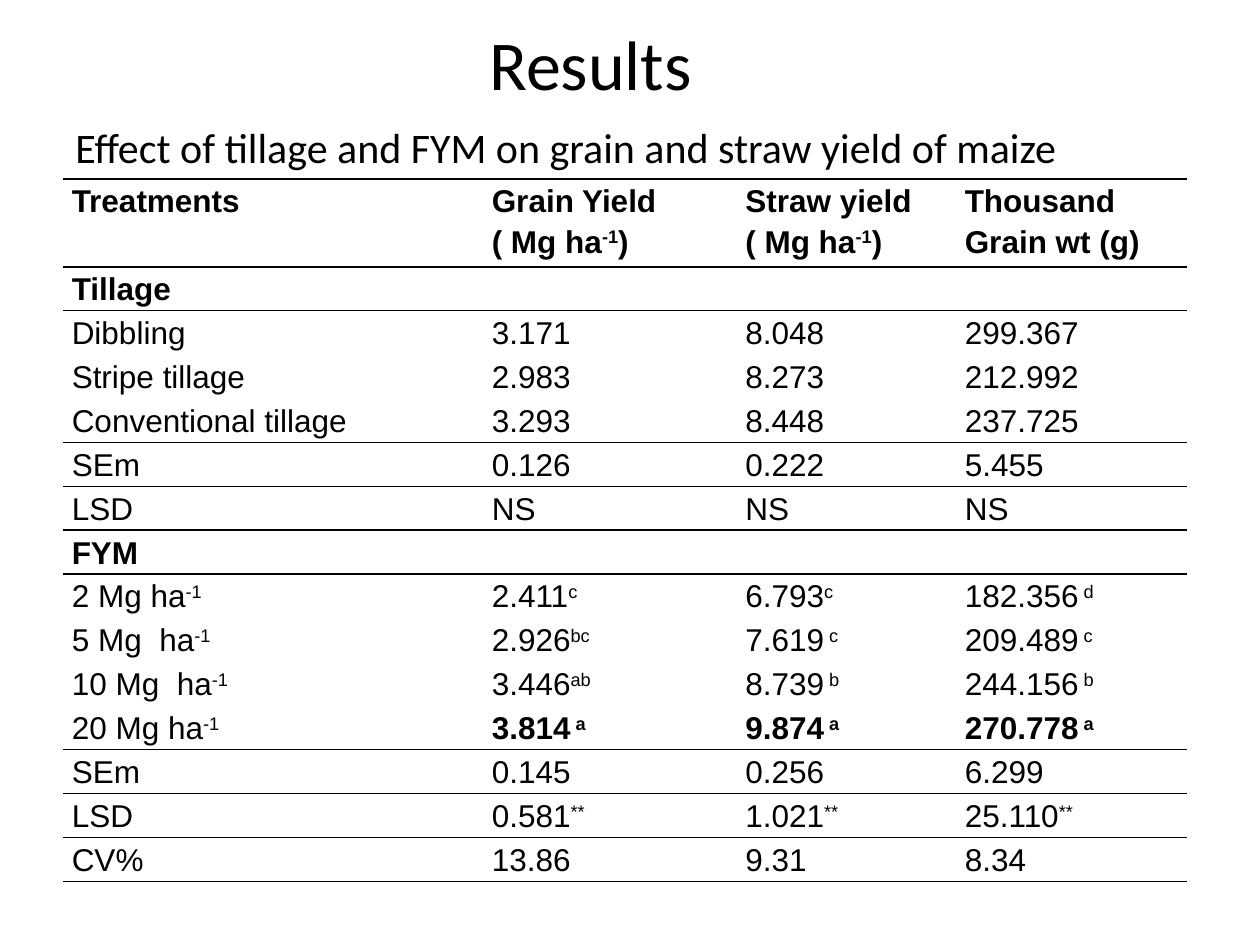
import pptx
import pptx.dml.color
import pptx.enum.text
import pptx.oxml
import pptx.oxml.ns
import pptx.util

Inches = pptx.util.Inches
MIDDLE = pptx.enum.text.MSO_ANCHOR.MIDDLE
CENTER = pptx.enum.text.PP_ALIGN.CENTER
COLORS = {"ink": "000000", "paper": "FFFFFF"}
NO_GRID_STYLE = "{2D5ABB26-0587-4C30-8999-92F81FD0307C}"
COLUMN_WIDTHS = (3.33, 2.01, 1.74, 1.83)
RULED_ROWS = {0, 4, 6, 11, 13, 14}
BOLD_ROWS = {0, 1, 7}
BEST_ROW = 11
YIELDS = [
    ("Treatments", "Grain Yield\n( Mg ha^-1^)", "Straw yield\n( Mg ha^-1^)", "Thousand Grain wt (g)"),
    ("Tillage", "", "", ""),
    ("Dibbling", "3.171", "8.048", "299.367"),
    ("Stripe tillage", "2.983", "8.273", "212.992"),
    ("Conventional tillage", "3.293", "8.448", "237.725"),
    ("SEm", "0.126", "0.222", "5.455"),
    ("LSD", "NS", "NS", "NS"),
    ("FYM", "", "", ""),
    ("2 Mg ha^-1", "2.411^c", "6.793^c", "182.356^ d"),
    ("5 Mg  ha^-1", "2.926^bc", "7.619^ c", "209.489^ c"),
    ("10 Mg  ha^-1", "3.446^ab", "8.739^ b", "244.156^ b"),
    ("20 Mg ha^-1", "3.814^ a", "9.874^ a", "270.778^ a"),
    ("SEm", "0.145", "0.256", "6.299"),
    ("LSD", "0.581^**", "1.021^**", "25.110^**"),
    ("CV%", "13.86", "9.31", "8.34"),
]


def rgb(name):
    """Return the named colour."""
    return pptx.dml.color.RGBColor.from_string(COLORS[name])


def write(paragraph, text, name, size, bold=False):
    """Fill a paragraph, raising every second part between carets."""
    for index, part in enumerate(text.split("^")):
        if part:
            run = paragraph.add_run()
            run.text = part
            font_format = {"name": name, "size": pptx.util.Pt(size), "bold": bold}
            for attribute, value in font_format.items():
                setattr(run.font, attribute, value)
            run.font.color.rgb = rgb("ink")
            if index % 2:
                run.font._element.set("baseline", "30000")


def rule(cell, edge):
    """Draw a one-point line along the T or B edge of a cell."""
    line = pptx.oxml.parse_xml(
        f'<a:ln{edge} {pptx.oxml.ns.nsdecls("a")} w="12700"><a:solidFill>'
        f'<a:srgbClr val="{COLORS["ink"]}"/></a:solidFill></a:ln{edge}>')
    cell._tc.get_or_add_tcPr().insert(0, line)


def add_title(slide, left, top, width, height):
    """Place the slide title in its box."""
    title = slide.shapes.title
    place = {"left": left, "top": top, "width": width, "height": height}
    for attribute, value in place.items():
        setattr(title, attribute, Inches(value))
    title.text_frame.vertical_anchor = MIDDLE
    heading = title.text_frame.paragraphs[0]
    heading.alignment = CENTER
    write(heading, "Results ", "Calibri", 40)


def add_subtitle(slide, left, top, width, height):
    """Place the table heading in its box."""
    box = slide.shapes.add_textbox(*map(Inches, (left, top, width, height)))
    box.text_frame.word_wrap = True
    box.text_frame.vertical_anchor = MIDDLE
    write(box.text_frame.paragraphs[0],
          "Effect of tillage and FYM on grain and straw yield of maize", "Calibri", 24)


def fill_cell(cell, text, bold):
    """Format one table cell and write its lines."""
    cell_format = {"margin_left": 0.07, "margin_right": 0.07, "margin_top": 0, "margin_bottom": 0}
    for attribute, value in cell_format.items():
        setattr(cell, attribute, Inches(value))
    cell.fill.background()
    for index, line in enumerate(text.split("\n")):
        frame = cell.text_frame
        paragraph = frame.add_paragraph() if index else frame.paragraphs[0]
        paragraph.line_spacing = 1.15
        write(paragraph, line, "Arial", 18, bold)


def add_yield_table(slide, left, top, width, height):
    """Build the yield table with a header row of double height."""
    table = slide.shapes.add_table(
        len(YIELDS), len(COLUMN_WIDTHS), *map(Inches, (left, top, width, height))).table
    table.first_row = table.horz_banding = False
    table._tbl.tblPr.find(pptx.oxml.ns.qn("a:tableStyleId")).text = NO_GRID_STYLE
    for column, share in zip(table.columns, COLUMN_WIDTHS):
        column.width = Inches(width * share / sum(COLUMN_WIDTHS))
    row_height = height / (len(YIELDS) + 1)
    for r, texts in enumerate(YIELDS):
        table.rows[r].height = Inches(row_height * (1 if r else 2))
        for c, text in enumerate(texts):
            cell = table.cell(r, c)
            fill_cell(cell, text, r in BOLD_ROWS or (r == BEST_ROW and c > 0))
            if r in RULED_ROWS:
                rule(cell, "B")
            if r == 0 or r - 1 in RULED_ROWS:
                rule(cell, "T")


def main():
    """Build and save the results slide."""
    deck = pptx.Presentation()
    deck.slide_width, deck.slide_height = Inches(10), Inches(7.5)
    slide = deck.slides.add_slide(deck.slide_layouts.get_by_name("Title Only"))
    slide.background.fill.solid()
    slide.background.fill.fore_color.rgb = rgb("paper")
    add_yield_table(slide, 0.5, 1.42, 8.92, 5.58)
    add_title(slide, 0.25, 0.08, 9, 0.83)
    add_subtitle(slide, 0.5, 0.83, 9, 0.67)
    deck.save("out.pptx")


if __name__ == "__main__":
    main()
